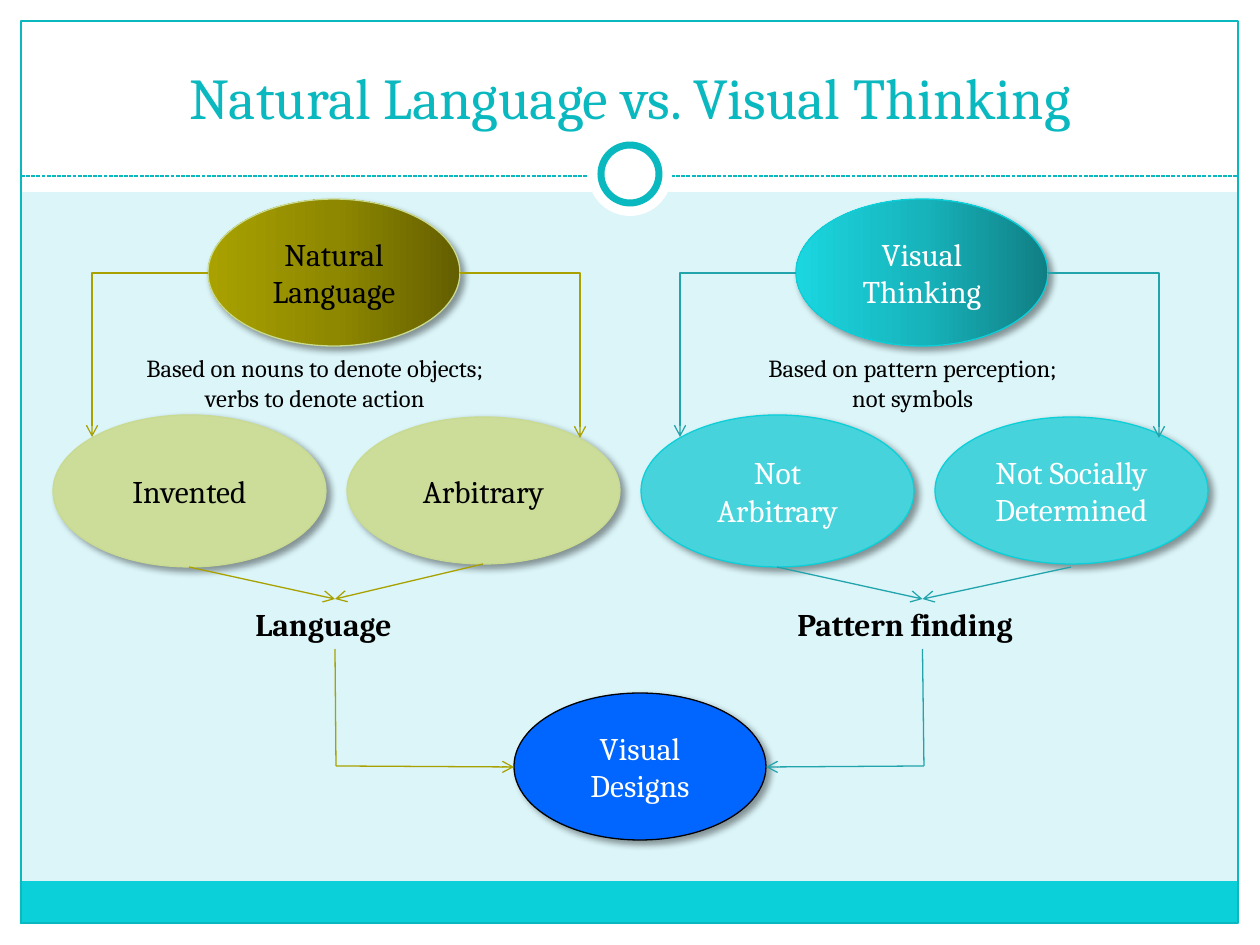
from dataclasses import dataclass

from lxml import etree
from pptx import Presentation
from pptx.dml.color import RGBColor
from pptx.enum.dml import MSO_LINE
from pptx.enum.shapes import MSO_CONNECTOR, MSO_SHAPE
from pptx.enum.text import MSO_ANCHOR, MSO_AUTO_SIZE, PP_ALIGN
from pptx.oxml import parse_xml
from pptx.oxml.ns import nsdecls, qn
from pptx.util import Emu, Pt

RECT, OVAL = MSO_SHAPE.RECTANGLE, MSO_SHAPE.OVAL
STRAIGHT, ELBOW = MSO_CONNECTOR.STRAIGHT, MSO_CONNECTOR.ELBOW
LEFT, CENTER = PP_ALIGN.LEFT, PP_ALIGN.CENTER
MIDDLE, BOTTOM = MSO_ANCHOR.MIDDLE, MSO_ANCHOR.BOTTOM
FIT_TEXT, DASH = MSO_AUTO_SIZE.SHAPE_TO_FIT_TEXT, MSO_LINE.SQUARE_DOT

FONT = "Cambria"
EMU_PER_PX = 914400 / 126
TOP_SIDE, BOTTOM_SIDE = 0, 2
COLORS = {
    "background": "DBF5F9", "white": "FFFFFF", "black": "000000",
    "band": "0BD0D9", "accent": "0AB8BF", "blue": "0066FF",
    "olive": "A9A100", "olive_edge": "C9DA91", "olive_pale": "CCDC99",
    "teal": "21A4AB", "teal_pale": "46D3DB",
}


@dataclass(frozen=True)
class Box:
    left: int
    top: int
    width: int
    height: int


@dataclass(frozen=True)
class Half:
    offset: int
    heading: str
    gradient: tuple[str, str, str]
    ink: str
    edge: str
    pale: str
    arrow: str
    left_child: str
    right_child: str
    caption: str
    caption_box: Box
    outcome: str
    outcome_box: Box
    bend_right: int
    right_start: int
    design_side: int


HALVES = [
    Half(0, "Natural Language", ("645F00", "8E8800", "A9A100"), "black", "olive_edge",
         "olive_pale", "olive", "Invented", "Arbitrary",
         "Based on nouns to denote objects;\nverbs to denote action", Box(134, 347, 402, 72),
         "Language", Box(243, 599, 184, 50), 580, 564, 514),
    Half(588, "Visual Thinking", ("107F84", "17B4BC", "1BD6DF"), "white", "band",
         "teal_pale", "teal", "Not\nArbitrary", "Not Socially Determined",
         "Based on pattern perception;\nnot symbols", Box(756, 347, 341, 72),
         "Pattern finding", Box(785, 599, 275, 50), 1159, 567, 766),
]


def px(length: int) -> Emu:
    return Emu(round(length * EMU_PER_PX))


def place(box: Box) -> tuple[Emu, Emu, Emu, Emu]:
    return px(box.left), px(box.top), px(box.width), px(box.height)


def rgb(name: str) -> RGBColor:
    return RGBColor.from_string(COLORS[name])


def write(frame, text: str, *, size: int, color: str, bold: bool = False,
          first_align=CENTER, anchor=MIDDLE, wrap: bool = True) -> None:
    frame.word_wrap = wrap
    frame.vertical_anchor = anchor
    for index, line in enumerate(text.split("\n")):
        para = frame.add_paragraph() if index else frame.paragraphs[0]
        para.alignment = CENTER if index else first_align
        span = para.add_run()
        span.text = line
        span.font.name = FONT
        span.font.size = Pt(size)
        span.font.bold = bold
        span.font.color.rgb = rgb(color)


def add_area(page, kind, box: Box, *, fill: str = "", line: str = "", weight: float = 0.75):
    shape = page.shapes.add_shape(kind, *place(box))
    shape.shadow.inherit = False
    if fill:
        shape.fill.solid()
        shape.fill.fore_color.rgb = rgb(fill)
    else:
        shape.fill.background()
    if line:
        shape.line.color.rgb = rgb(line)
        shape.line.width = Pt(weight)
    else:
        shape.line.fill.background()
    return shape


def add_node(page, box: Box, text: str, *, ink: str, line: str, fill: str = "",
             gradient: tuple = ()) -> None:
    shape = add_area(page, OVAL, box, fill=fill, line=line)
    properties = shape._element.spPr
    if gradient:
        stops = "".join(
            f'<a:gs pos="{index * 50000}"><a:srgbClr val="{color}"/></a:gs>'
            for index, color in enumerate(gradient))
        properties.replace(properties.find(qn("a:noFill")), parse_xml(
            f'<a:gradFill {nsdecls("a")} rotWithShape="1"><a:gsLst>{stops}</a:gsLst>'
            '<a:lin ang="10800000" scaled="0"/></a:gradFill>'))
    properties.find(qn("a:effectLst")).append(parse_xml(
        f'<a:outerShdw {nsdecls("a")} blurRad="{Pt(4)}" dist="{Pt(3)}" dir="2700000" '
        'algn="tl" rotWithShape="0"><a:srgbClr val="000000"><a:alpha val="40000"/>'
        '</a:srgbClr></a:outerShdw>'))
    write(shape.text_frame, text, size=18, color=ink)


def add_label(page, box: Box, text: str, *, size: int, bold: bool = False):
    label = page.shapes.add_textbox(*place(box))
    write(label.text_frame, text, size=size, color="black", bold=bold,
          first_align=LEFT, anchor=MSO_ANCHOR.TOP, wrap=False)
    label.text_frame.auto_size = FIT_TEXT
    return label


def add_line(page, start: tuple[int, int], end: tuple[int, int], color: str, *,
             kind=STRAIGHT, arrow: bool = True):
    connector = page.shapes.add_connector(kind, *map(px, start + end))
    connector.line.color.rgb = rgb(color)
    connector.line.width = Pt(0.75)
    if arrow:
        etree.SubElement(connector.line._get_or_add_ln(), qn("a:tailEnd"), type="arrow")
    etree.SubElement(connector._element.spPr, qn("a:effectLst"))
    return connector


def add_bend(page, start: tuple[int, int], end: tuple[int, int], color: str) -> None:
    left, right = sorted((start[0], end[0]))
    bend = add_line(page, (left, start[1]), (right, end[1]), color, kind=ELBOW)
    properties = bend._element.spPr
    properties.find(qn("a:prstGeom")).set("prst", "bentConnector2")
    if end[0] < start[0]:
        transform = properties.find(qn("a:xfrm"))
        transform.set("rot", "10800000")
        transform.set("flipV", "1")


def draw_frame(page) -> None:
    for box in (Box(0, 924, 1260, 21), Box(0, 0, 1260, 192),
                Box(0, 0, 21, 945), Box(1239, 0, 21, 945)):
        add_area(page, RECT, box, fill="white")
    add_area(page, RECT, Box(20, 881, 1217, 43), fill="band")
    add_area(page, RECT, Box(21, 21, 1217, 902), line="accent")
    divider = add_line(page, (21, 176), (1239, 176), "accent", arrow=False)
    divider.line.dash_style = DASH
    add_area(page, OVAL, Box(588, 132, 84, 84), fill="white")
    add_area(page, OVAL, Box(601, 145, 58, 58), fill="white", line="accent", weight=4)


def draw_title(page) -> None:
    title = page.shapes.title
    title.left, title.top, title.width, title.height = place(Box(42, 32, 1176, 105))
    write(title.text_frame, "Natural Language vs. Visual Thinking",
          size=33, color="accent", anchor=BOTTOM)
    page.shapes._spTree.append(title._element)


def draw_half(page, half: Half) -> None:
    shift, color = half.offset, half.arrow
    add_node(page, Box(208 + shift, 199, 252, 147), half.heading,
             ink=half.ink, line=half.edge, gradient=half.gradient)
    for box, text in ((Box(347 + shift, 417, 273, 147), half.right_child),
                      (Box(53 + shift, 415, 273, 152), half.left_child)):
        add_node(page, box, text, ink=half.ink, line=half.edge, fill=half.pale)
    add_label(page, half.caption_box, half.caption, size=14)
    add_bend(page, (460 + shift, 273), (half.bend_right, 438), color)
    add_bend(page, (208 + shift, 273), (92 + shift, 437), color)
    outcome = add_label(page, half.outcome_box, half.outcome, size=18, bold=True)
    middle = 334 + shift
    for start in ((189 + shift, 567), (483 + shift, half.right_start)):
        add_line(page, start, (middle, 599), color).end_connect(outcome, TOP_SIDE)
    corner = (middle + 2, 766)
    stem = add_line(page, (middle, 649), corner, color, arrow=False)
    stem.begin_connect(outcome, BOTTOM_SIDE)
    add_line(page, corner, (half.design_side, 767), color)


def main() -> None:
    deck = Presentation()
    deck.slide_width, deck.slide_height = px(1260), px(945)
    page = deck.slides.add_slide(deck.slide_layouts[5])
    page.background.fill.solid()
    page.background.fill.fore_color.rgb = rgb("background")
    draw_frame(page)
    draw_title(page)
    add_node(page, Box(514, 693, 252, 147), "Visual Designs",
             ink="white", line="black", fill="blue")
    for half in HALVES:
        draw_half(page, half)
    deck.save("out.pptx")


if __name__ == "__main__":
    main()
